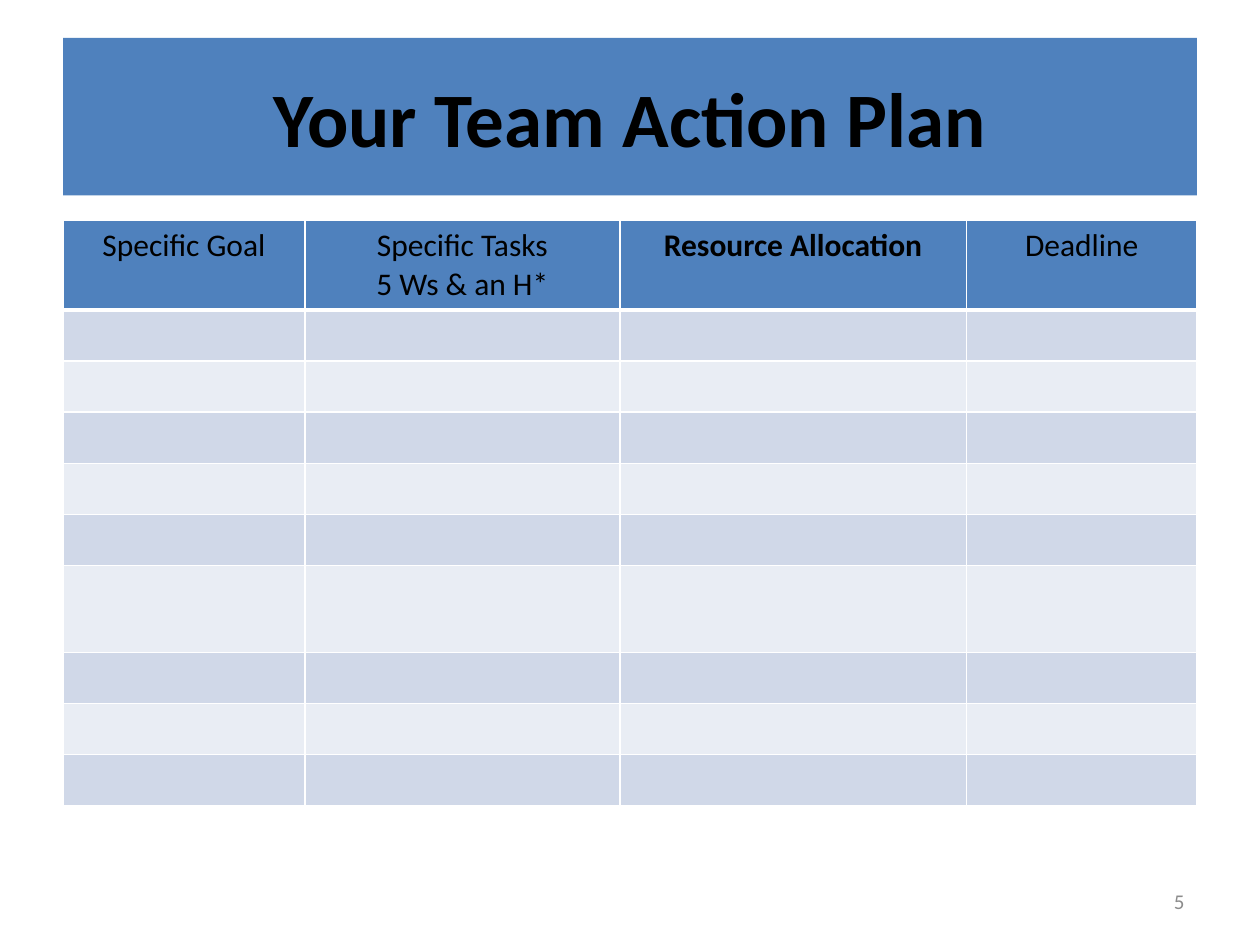
from lxml import etree
from pptx import Presentation
from pptx.dml.color import RGBColor
from pptx.enum.text import MSO_ANCHOR, PP_ALIGN
from pptx.oxml.ns import qn
from pptx.util import Inches, Pt

CENTER, RIGHT = PP_ALIGN.CENTER, PP_ALIGN.RIGHT
MIDDLE = MSO_ANCHOR.MIDDLE
TITLE_ONLY = 5
COLORS = {
    "blue": "4F81BD",
    "dark_band": "D0D8E8",
    "light_band": "E9EDF4",
    "rule": "FFFFFF",
    "text": "000000",
    "number": "8C8C8C",
}


def write(frame, text, align, size, color="text", bold=False):
    frame.text = text
    for paragraph in frame.paragraphs:
        paragraph.alignment = align
        for run in paragraph.runs:
            font_format = {"name": "Calibri", "size": Pt(size), "bold": bold}
            for key, value in font_format.items():
                setattr(run.font, key, value)
            run.font.color.rgb = RGBColor.from_string(COLORS[color])


def style_cell(cell, fill, bottom_width):
    # Borders go in before the fill, as the schema orders them
    properties = cell._tc.get_or_add_tcPr()
    widths = {"a:lnL": 1, "a:lnR": 1, "a:lnT": 1, "a:lnB": bottom_width}
    for side, width in widths.items():
        line = etree.SubElement(properties, qn(side), w=str(Pt(width)))
        solid = etree.SubElement(line, qn("a:solidFill"))
        etree.SubElement(solid, qn("a:srgbClr"), val=COLORS["rule"])
    cell.fill.solid()
    cell.fill.fore_color.rgb = RGBColor.from_string(COLORS[fill])


prs = Presentation()
prs.slide_width, prs.slide_height = Inches(10), Inches(7.5)
slide = prs.slides.add_slide(prs.slide_layouts[TITLE_ONLY])

# Title banner
title = slide.shapes.title
banner_box = {"left": 0.5, "top": 0.3, "width": 9, "height": 1.25}
for key, value in banner_box.items():
    setattr(title, key, Inches(value))
title.fill.solid()
title.fill.fore_color.rgb = RGBColor.from_string(COLORS["blue"])
title.text_frame.vertical_anchor = MIDDLE
write(title.text_frame, "Your Team Action Plan", CENTER, 44, bold=True)

# Action plan table: a header and nine empty rows to fill in
headings = [
    ("Specific Goal", False),
    ("Specific Tasks\n5 Ws & an H*", False),
    ("Resource Allocation", True),
    ("Deadline", False),
]
column_widths = [1.92, 2.5, 2.75, 1.83]
row_heights = [0.58] + [0.4] * 5 + [0.69] + [0.4] * 3
plan = slide.shapes.add_table(
    len(row_heights), len(column_widths),
    Inches(0.5), Inches(1.75), Inches(9), Inches(sum(row_heights)),
).table
for column, width in zip(plan.columns, column_widths):
    column.width = Inches(width)
for index, (row, height) in enumerate(zip(plan.rows, row_heights)):
    row.height = Inches(height)
    band = "dark_band" if index % 2 else "light_band"
    for cell in row.cells:
        if index == 0:
            style_cell(cell, "blue", 3)
        else:
            style_cell(cell, band, 1)
for cell, (heading, bold) in zip(plan.rows[0].cells, headings):
    write(cell.text_frame, heading, CENTER, 18, bold=bold)

# Slide number
number = slide.shapes.add_textbox(
    Inches(7.17), Inches(6.95), Inches(2.33), Inches(0.4)
).text_frame
number.word_wrap = True
number.vertical_anchor = MIDDLE
write(number, "5", RIGHT, 12, "number")

prs.save("out.pptx")
